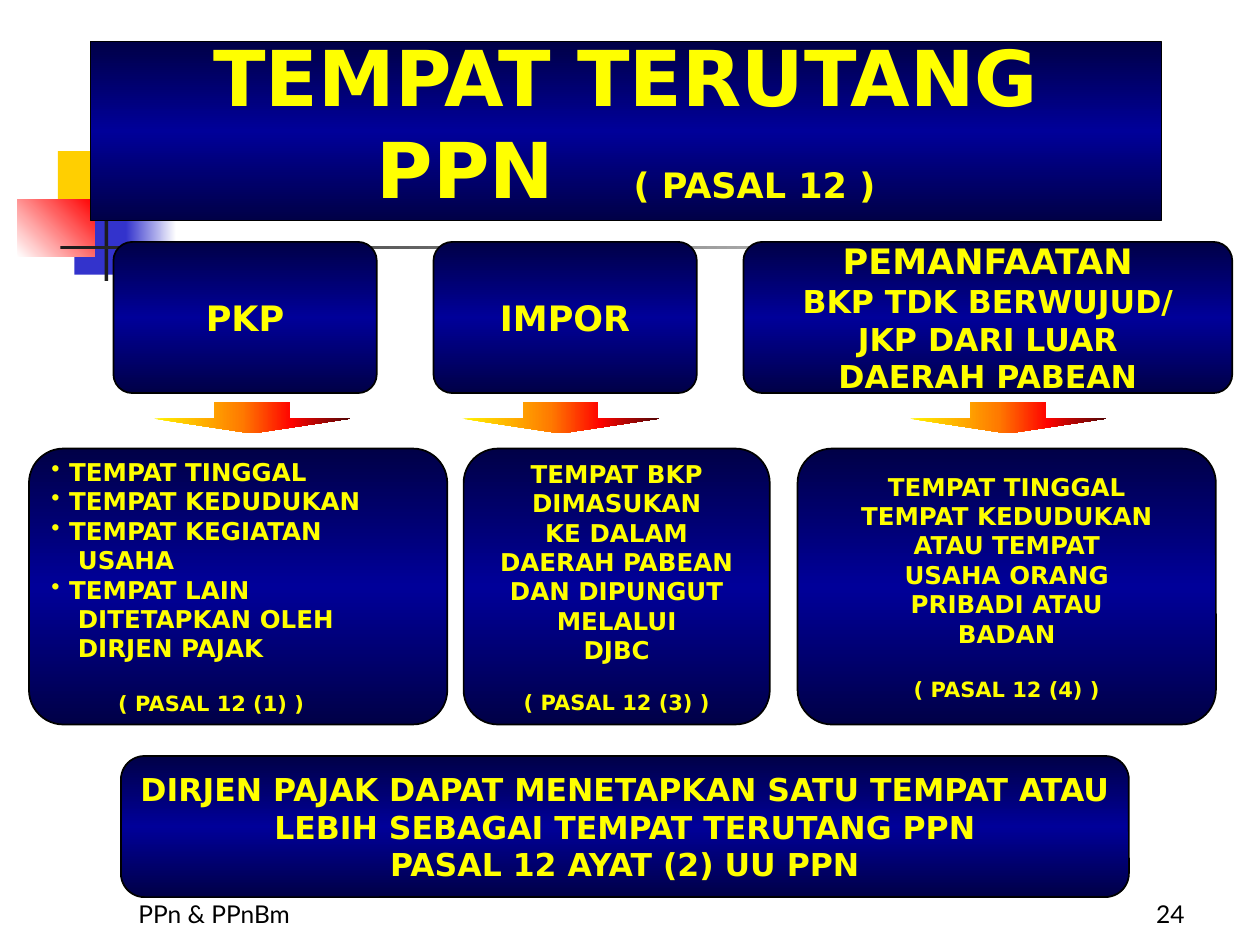
from dataclasses import dataclass

from lxml import etree
from pptx import Presentation, util as u
from pptx.dml.color import RGBColor
from pptx.enum import shapes, text
from pptx.oxml.ns import qn

RECTANGLE = shapes.MSO_SHAPE.RECTANGLE
ROUNDED = shapes.MSO_SHAPE.ROUNDED_RECTANGLE
DOWN_ARROW = shapes.MSO_SHAPE.DOWN_ARROW
CENTER, LEFT, RIGHT = text.PP_ALIGN.CENTER, text.PP_ALIGN.LEFT, text.PP_ALIGN.RIGHT
MIDDLE, BOTTOM = text.MSO_ANCHOR.MIDDLE, text.MSO_ANCHOR.BOTTOM


@dataclass(frozen=True)
class Theme:
    font: str = "DejaVu Sans"
    footer_font: str = "Lato"
    letters: str = "FFFF00"
    ink: str = "000000"
    gold: str = "FFCF01"
    blue: str = "3333CC"
    red: str = "FF0000"
    charcoal: str = "1C1C1C"
    white: str = "FFFFFF"
    panel: tuple = ((0, "000047"), (50, "000099"), (100, "000047"))
    flame: tuple = ((0, "FFF200"), (45, "FF7A00"), (70, "FF0300"), (100, "4D0808"))
    title: int = 44
    heading: int = 20
    statement: int = 18
    body: int = 14
    reference: int = 12


@dataclass
class Line:
    """One paragraph of text with its indent and spacing."""
    words: str
    size: int
    bullet: bool = False
    indent: float = 0
    before: float = 0


class SlideBuilder:
    def __init__(self, slide, theme):
        self.slide = slide
        self.theme = theme

    def paint(self, shape, fill, angle=0, line_width=0):
        """Fill with one colour or with (position, colour) stops."""
        if isinstance(fill, str):
            shape.fill.solid()
            shape.fill.fore_color.rgb = RGBColor.from_string(fill)
        else:
            shape.fill.gradient()
            gradient = shape.element.spPr.find(qn("a:gradFill"))
            stop_list = gradient.find(qn("a:gsLst"))
            for stop in list(stop_list):
                stop_list.remove(stop)
            for position, color in fill:
                stop = etree.SubElement(stop_list, qn("a:gs"), pos=str(position * 1000))
                etree.SubElement(stop, qn("a:srgbClr"), val=color)
            gradient.find(qn("a:lin")).set("ang", str(angle * 60000))
        if line_width:
            shape.line.color.rgb = RGBColor.from_string(self.theme.ink)
            shape.line.width = u.Pt(line_width)
        else:
            shape.line.fill.background()

    def shape(self, kind, box, fill, angle=0, line_width=0, adjustments=()):
        shape = self.slide.shapes.add_shape(kind, *map(u.Inches, box))
        shape.shadow.inherit = False
        for index, value in enumerate(adjustments):
            shape.adjustments[index] = value
        self.paint(shape, fill, angle, line_width)
        return shape

    def run(self, paragraph, words, size, font=None, color=None, bold=True):
        run = paragraph.add_run()
        run.text = words
        run.font.name = font or self.theme.font
        run.font.size = u.Pt(size)
        run.font.bold = bold
        run.font.color.rgb = RGBColor.from_string(color or self.theme.letters)
        return run

    def panel(self, box, lines, align=CENTER, corner=0.125):
        shape = self.shape(ROUNDED, box, self.theme.panel, 90, 1, [corner])
        frame = shape.text_frame
        frame.word_wrap = True
        frame.vertical_anchor = MIDDLE
        for index, line in enumerate(lines):
            paragraph = frame.add_paragraph() if index else frame.paragraphs[0]
            paragraph.alignment = align
            if line.before:
                paragraph.space_before = u.Pt(line.before)
            if line.indent:
                properties = paragraph._p.get_or_add_pPr()
                properties.set("marL", str(u.Inches(line.indent)))
                if line.bullet:
                    properties.set("indent", str(-u.Inches(line.indent)))
                    etree.SubElement(properties, qn("a:buChar"), char="•")
            self.run(paragraph, line.words, line.size)

    def title(self, box, first, second, reference):
        theme = self.theme
        shape = self.slide.shapes.title
        shape.left, shape.top, shape.width, shape.height = map(u.Inches, box)
        self.paint(shape, theme.panel, 90, 0.75)
        frame = shape.text_frame
        frame.word_wrap = True
        frame.auto_size = text.MSO_AUTO_SIZE.NONE
        frame.vertical_anchor = BOTTOM
        paragraph = frame.paragraphs[0]
        paragraph.alignment = CENTER
        self.run(paragraph, first, theme.title)
        paragraph.add_line_break()
        self.run(paragraph, second, theme.title)
        # One widened space sets the reference apart
        gap = self.run(paragraph, " ", theme.title)
        gap.font._element.set("spc", "3000")
        self.run(paragraph, reference, theme.heading)
        # Bring the title in front of the ornament
        shape.element.getparent().append(shape.element)

    def footer(self, box, words, align):
        frame = self.slide.shapes.add_textbox(*map(u.Inches, box)).text_frame
        frame.word_wrap = True
        frame.vertical_anchor = BOTTOM
        frame.paragraphs[0].alignment = align
        self.run(frame.paragraphs[0], words, self.theme.body,
                 self.theme.footer_font, self.theme.ink, False)


def main():
    theme = Theme()
    presentation = Presentation()
    presentation.slide_width, presentation.slide_height = u.Inches(10), u.Inches(7.5)
    slide = presentation.slides.add_slide(presentation.slide_layouts[5])
    builder = SlideBuilder(slide, theme)

    # Corner ornament and rule
    def fade(start, end):
        return (0, start), (100, end)

    for box, fill, angle in (
        ((0.46, 1.2, 0.48, 0.52), theme.gold, 0),
        ((0.88, 1.2, 0.36, 0.52), fade(theme.gold, theme.white), 0),
        ((0.59, 1.66, 0.46, 0.52), theme.blue, 0),
        ((1, 1.66, 0.4, 0.52), fade(theme.blue, theme.white), 0),
        ((0.14, 1.58, 0.61, 0.46), fade(theme.white, theme.red), 315),
        ((0.83, 1.08, 0.03, 1.15), theme.charcoal, 0),
        ((0.48, 1.95, 9, 0.03), fade(theme.charcoal, theme.white), 0),
    ):
        builder.shape(RECTANGLE, box, fill, angle)

    # Title and footer
    builder.title((0.72, 0.33, 8.5, 1.42), "TEMPAT TERUTANG", "PPN", "( PASAL 12 )")
    builder.footer((1, 6.92, 2.08, 0.5), "PPn & PPnBm", LEFT)
    builder.footer((7.42, 6.92, 2.08, 0.5), "24", RIGHT)

    # Heading panels
    for left, width, first, *others in (
        (0.9, 2.09, "PKP"),
        (3.44, 2.09, "IMPOR"),
        (5.9, 3.88, "PEMANFAATAN", "BKP TDK BERWUJUD/", "JKP DARI LUAR", "DAERAH PABEAN"),
    ):
        lines = [Line(first, theme.heading)]
        lines += [Line(words, theme.statement) for words in others]
        builder.panel((left, 1.92, width, 1.2), lines)

    # Arrows from headings to details
    for left in (1.22, 3.67, 7.22):
        builder.shape(DOWN_ARROW, (left, 3.19, 1.56, 0.25), theme.flame,
                      adjustments=(0.38, 0.472))

    # Bulleted detail panel
    places = [Line(words, theme.body, bullet, 0.14 if bullet else 0.21) for words, bullet in (
        ("TEMPAT TINGGAL", True), ("TEMPAT KEDUDUKAN", True),
        ("TEMPAT KEGIATAN", True), ("USAHA", False),
        ("TEMPAT LAIN", True), ("DITETAPKAN OLEH", False), ("DIRJEN PAJAK", False),
    )]
    places.append(Line("( PASAL 12 (1) )", theme.reference, indent=0.53, before=16))
    builder.panel((0.23, 3.56, 3.32, 2.19), places, LEFT)

    # Centred detail panels
    for left, width, reference, gap, details in (
        (3.68, 2.43, "( PASAL 12 (3) )", 14,
         ("TEMPAT BKP", "DIMASUKAN", "KE DALAM", "DAERAH PABEAN",
          "DAN DIPUNGUT", "MELALUI", "DJBC")),
        (6.33, 3.32, "( PASAL 12 (4) )", 16,
         ("TEMPAT TINGGAL", "TEMPAT KEDUDUKAN", "ATAU TEMPAT",
          "USAHA ORANG", "PRIBADI ATAU", "BADAN")),
    ):
        lines = [Line(words, theme.body) for words in details]
        lines.append(Line(reference, theme.reference, before=gap))
        builder.panel((left, 3.56, width, 2.19), lines)

    # Closing statement
    builder.panel((0.96, 6, 8, 1.12), [Line(words, theme.statement) for words in (
        "DIRJEN PAJAK DAPAT MENETAPKAN SATU TEMPAT ATAU LEBIH SEBAGAI TEMPAT TERUTANG PPN",
        "PASAL 12 AYAT (2) UU PPN",
    )], corner=0.167)

    presentation.save("out.pptx")


if __name__ == "__main__":
    main()
